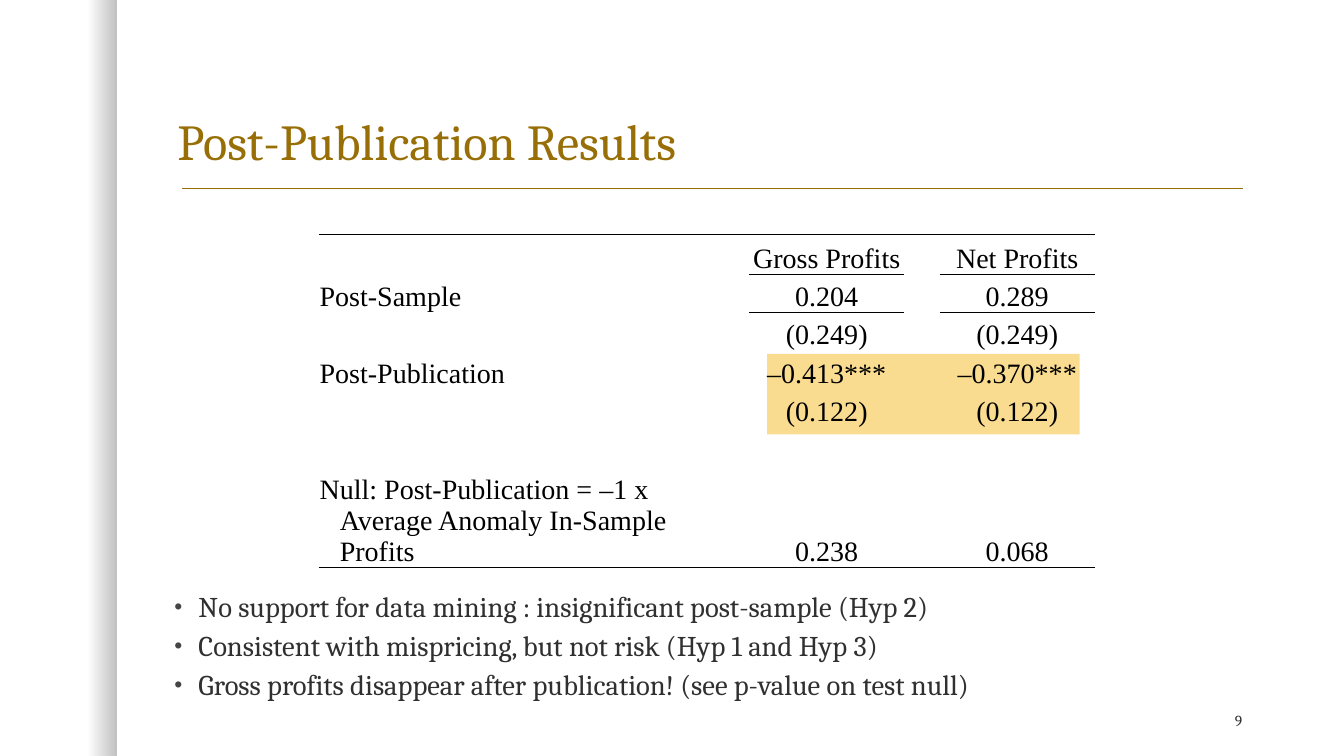
import lxml.etree
import pptx
import pptx.dml.color
import pptx.enum.shapes
import pptx.enum.text
import pptx.oxml
import pptx.oxml.ns
import pptx.util

Inches = pptx.util.Inches
Pt = pptx.util.Pt
ALIGN = pptx.enum.text.PP_ALIGN
ANCHOR = pptx.enum.text.MSO_ANCHOR
RECTANGLE = pptx.enum.shapes.MSO_SHAPE.RECTANGLE
qn = pptx.oxml.ns.qn


def rgb(value):
    return pptx.dml.color.RGBColor.from_string(value)


def add_run(para, text, size, color, font="Cambria"):
    span = para.add_run()
    span.text = text
    span.font.size = Pt(size)
    span.font.name = font
    span.font.color.rgb = rgb(color)


deck = pptx.Presentation()
deck.slide_width = Inches(13.33)
deck.slide_height = Inches(7.5)
page = deck.slides.add_slide(deck.slide_layouts[6])

side_shade = page.shapes.add_shape(RECTANGLE, 0, 0, Inches(1.16), Inches(7.5))
side_shade.shadow.inherit = False
side_shade.line.fill.background()
side_shade.fill.gradient()
side_shade.fill.gradient_angle = 0
for stop, position, alpha in zip(side_shade.fill.gradient_stops, (0.75, 1), (0, 25000)):
    stop.position = position
    stop.color.rgb = rgb("000000")
for color, alpha in zip(side_shade.fill._xPr.iter(qn("a:srgbClr")), (0, 25000)):
    lxml.etree.SubElement(color, qn("a:alpha"), val=str(alpha))

title_rule = page.shapes.add_connector(
    pptx.enum.shapes.MSO_CONNECTOR.STRAIGHT, Inches(1.81), Inches(1.87), Inches(12.33), Inches(1.87))
title_rule.line.color.rgb = rgb("986F07")
title_rule.line.width = Pt(1)
lxml.etree.SubElement(title_rule._element.spPr, qn("a:effectLst"))

highlight = page.shapes.add_shape(RECTANGLE, Inches(7.61), Inches(3.51), Inches(3.1), Inches(0.8))
highlight.shadow.inherit = False
highlight.fill.solid()
highlight.fill.fore_color.rgb = rgb("FADC91")
highlight.line.fill.background()

title_box = page.shapes.add_textbox(Inches(1.66), Inches(0.42), Inches(10.75), Inches(1.33))
title_box.text_frame.word_wrap = True
title_box.text_frame.vertical_anchor = ANCHOR.BOTTOM
title_para = title_box.text_frame.paragraphs[0]
title_para.line_spacing = 0.9
add_run(title_para, "Post-Publication Results", 36, "986F07")

findings = [
    "No support for data mining : insignificant post-sample (Hyp 2)",
    "Consistent with mispricing, but not risk (Hyp 1 and Hyp 3)",
    "Gross profits disappear after publication! (see p-value on test null)",
]
findings_box = page.shapes.add_textbox(Inches(1.63), Inches(5.83), Inches(10.75), Inches(1.23))
findings_box.text_frame.word_wrap = True
for index, finding in enumerate(findings):
    para = findings_box.text_frame.paragraphs[0] if index == 0 else findings_box.text_frame.add_paragraph()
    properties = para._p.get_or_add_pPr()
    properties.set("marL", str(Inches(0.24)))
    properties.set("indent", str(-Inches(0.24)))
    bullet_color = lxml.etree.SubElement(properties, qn("a:buClr"))
    lxml.etree.SubElement(bullet_color, qn("a:srgbClr"), val="454545")
    lxml.etree.SubElement(properties, qn("a:buSzPct"), val="80000")
    lxml.etree.SubElement(properties, qn("a:buFont"), typeface="Arial")
    lxml.etree.SubElement(properties, qn("a:buChar"), char="•")
    para.line_spacing = 0.9
    para.space_before = Pt(6 if index else 0)
    add_run(para, finding, 20.4, "303030")

number_box = page.shapes.add_textbox(Inches(11.25), Inches(7), Inches(1.17), Inches(0.3))
number_box.text_frame.word_wrap = True
number_box.text_frame.vertical_anchor = ANCHOR.MIDDLE
number_para = number_box.text_frame.paragraphs[0]
number_para.alignment = ALIGN.RIGHT
add_run(number_para, "9", 11, "303030")

results = [
    ["", "Gross Profits", "", "Net Profits"],
    ["Post-Sample", "0.204", "", "0.289"],
    ["", "(0.249)", "", "(0.249)"],
    ["Post-Publication", "–0.413***", "", "–0.370***"],
    ["", "(0.122)", "", "(0.122)"],
    ["", "", "", ""],
    ["Null: Post-Publication = –1 x\nAverage Anomaly In-Sample Profits", "0.238", "", "0.068"],
]
column_widths = [4.27, 1.54, 0.35, 1.54]
row_heights = [0.39, 0.38, 0.38, 0.38, 0.38, 0.38, 0.77]
last_row = len(results) - 1
table = page.shapes.add_table(
    len(results), len(column_widths), Inches(3.16), Inches(2.33), Inches(7.7), Inches(3.06)).table
table.first_row = False
table.horz_banding = False
table._tbl.tblPr.find(qn("a:tableStyleId")).text = "{2D5ABB26-0587-4C30-8999-92F81FD0307C}"
for column, width in zip(table.columns, column_widths):
    column.width = Inches(width)
for row, height in zip(table.rows, row_heights):
    row.height = Inches(height)

for row_index, values in enumerate(results):
    for column_index, value in enumerate(values):
        cell = table.cell(row_index, column_index)
        cell.fill.background()
        cell.vertical_anchor = ANCHOR.BOTTOM
        cell.margin_left = cell.margin_right = cell.margin_top = Inches(0.01)
        cell.margin_bottom = 0
        for line_index, text in enumerate(value.split("\n")):
            para = cell.text_frame.paragraphs[0] if line_index == 0 else cell.text_frame.add_paragraph()
            para.alignment = ALIGN.CENTER if column_index else ALIGN.LEFT
            if line_index:
                para._p.get_or_add_pPr().set("marL", str(Inches(0.2)))
            if text:
                add_run(para, text, 20, "000000", "Times New Roman")

        is_profit = column_index in (1, 3)
        edges = []
        if row_index == 0 or (row_index == 1 and is_profit):
            edges.append("a:lnT")
        if row_index == last_row or (row_index == 0 and is_profit):
            edges.append("a:lnB")
        for position, edge in enumerate(edges):
            border = lxml.etree.Element(qn(edge), w=str(Pt(1)))
            border_fill = lxml.etree.SubElement(border, qn("a:solidFill"))
            lxml.etree.SubElement(border_fill, qn("a:srgbClr"), val="000000")
            cell._tc.get_or_add_tcPr().insert(position, border)

deck.save("out.pptx")
